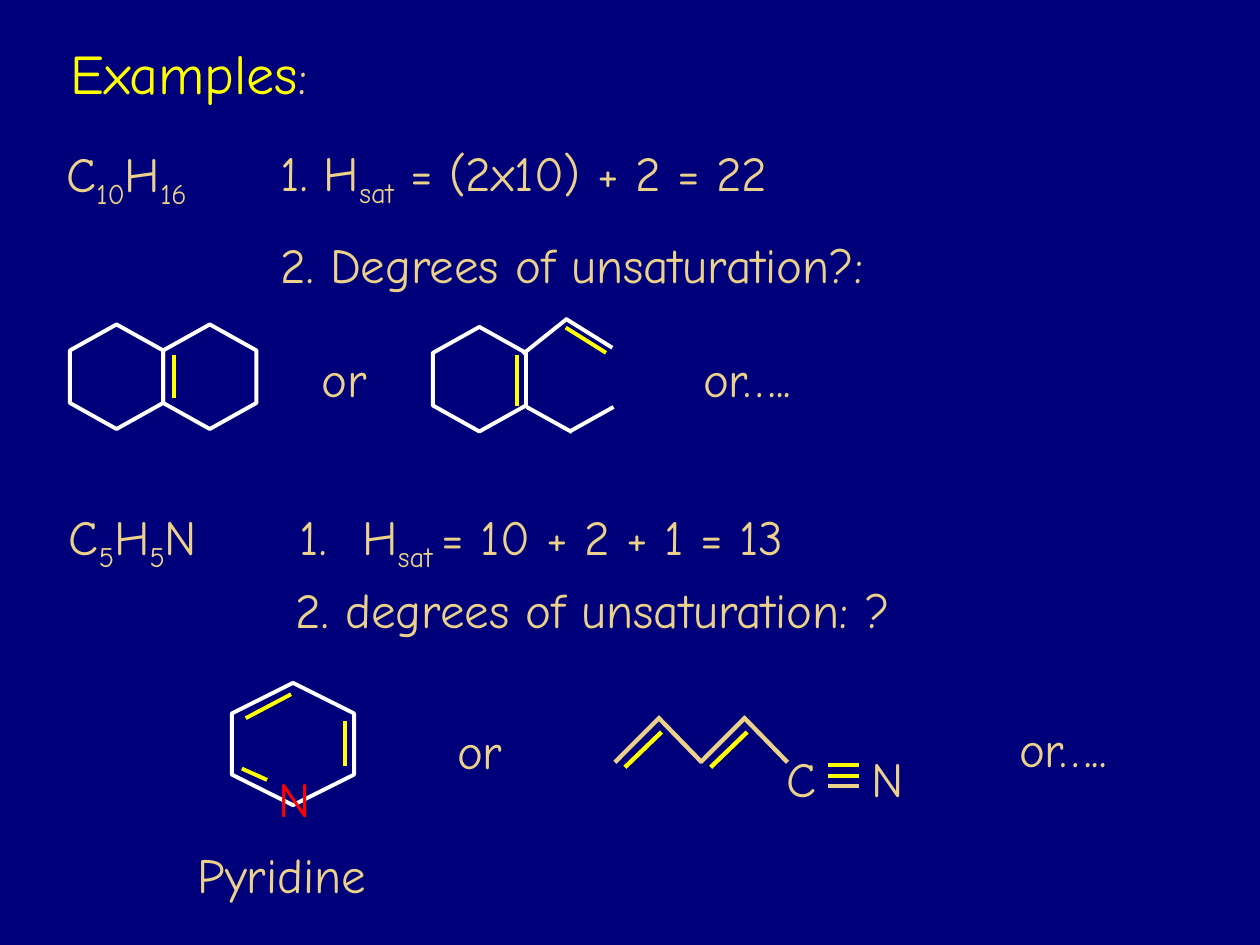
from dataclasses import dataclass

from lxml import etree
from pptx import Presentation
from pptx import util as u
from pptx.dml.color import RGBColor
from pptx.enum import shapes, text
from pptx.oxml import ns


@dataclass(frozen=True)
class Theme:
    """Colours, font and sizes shared by the whole slide."""
    background: str = "00007A"
    sand: str = "EBD189"
    yellow: str = "FFFF00"
    white: str = "FFFFFF"
    red: str = "FF0000"
    font: str = "Comic Neue"
    title: int = 32
    body: int = 28
    ring: float = 2.25
    chain: float = 2.5


THEME = Theme()
CENTER = text.PP_ALIGN.CENTER
LEFT = text.PP_ALIGN.LEFT


def add_run(paragraph, words, colour=THEME.sand, size=THEME.body, subscript=False):
    """Append one formatted run to a paragraph."""
    run = paragraph.add_run()
    run.text = words
    run.font.name = THEME.font
    run.font.size = u.Pt(size)
    run.font.color.rgb = RGBColor.from_string(colour)
    if subscript:
        run.font._element.set("baseline", "-25000")


def add_label(slide, left, top, width, words="", align=LEFT, colour=THEME.sand, height=0.57):
    """Add a text box; every second part split by a bar is a subscript."""
    box = slide.shapes.add_textbox(*map(u.Inches, (left, top, width, height)))
    frame = box.text_frame
    frame.word_wrap = True
    frame.auto_size = text.MSO_AUTO_SIZE.SHAPE_TO_FIT_TEXT
    paragraph = frame.paragraphs[0]
    paragraph.alignment = align
    for index, part in enumerate(words.split("|") if words else []):
        add_run(paragraph, part, colour, subscript=index % 2 == 1)
    return paragraph


def hang(paragraph, numbered=False):
    """Give a paragraph a half-inch hanging indent and an optional number."""
    properties = paragraph._p.get_or_add_pPr()
    properties.set("marL", str(u.Inches(0.5)))
    properties.set("indent", str(-u.Inches(0.5)))
    if numbered:
        etree.SubElement(properties, ns.qn("a:buAutoNum"), type="arabicPeriod")


def add_ring(slide, left, top, width, height, adjustment):
    """Add an unfilled hexagon standing on its point."""
    ring = slide.shapes.add_shape(
        shapes.MSO_SHAPE.HEXAGON, *map(u.Inches, (left, top, width, height)))
    ring.rotation = 90
    ring.adjustments[0] = adjustment
    ring.shadow.inherit = False
    ring.fill.background()
    ring.line.color.rgb = RGBColor.from_string(THEME.white)
    ring.line.width = u.Pt(THEME.ring)


def add_bonds(slide, left, top, colour, weight, bonds):
    """Draw bonds given as start and end offsets from a corner."""
    for x1, y1, x2, y2 in bonds:
        line = slide.shapes.add_connector(
            shapes.MSO_CONNECTOR.STRAIGHT,
            *map(u.Inches, (left + x1, top + y1, left + x2, top + y2)))
        line.line.color.rgb = RGBColor.from_string(colour)
        line.line.width = u.Pt(weight)
        etree.SubElement(line._element.spPr, ns.qn("a:effectLst"))


def add_title(slide, left, top, width):
    """Add the heading with its smaller colon."""
    paragraph = add_label(slide, left, top, width, align=CENTER, height=0.63)
    add_run(paragraph, "Examples", THEME.yellow, THEME.title)
    add_run(paragraph, ":")


def add_fused_rings(slide, left, top):
    """Draw two fused six-membered rings sharing a double bond."""
    for offset in (0, 0.74):
        add_ring(slide, left + offset, top, 0.83, 0.74, 0.279)
    add_bonds(slide, left, top, THEME.yellow, THEME.ring, [(0.87, 0.2, 0.87, 0.54)])


def add_open_ring(slide, left, top):
    """Draw one ring carrying a vinyl and an ethyl group."""
    add_ring(slide, left, top, 0.83, 0.74, 0.279)
    add_bonds(slide, left, top, THEME.white, THEME.ring, [
        (1.11, -0.11, 0.76, 0.17), (1.1, -0.11, 1.47, 0.12),
        (1.14, 0.78, 1.48, 0.59), (1.15, 0.79, 0.79, 0.59)])
    add_bonds(slide, left, top, THEME.yellow, THEME.ring, [
        (0.71, 0.18, 0.71, 0.58), (1.1, -0.04, 1.42, 0.16)])


def add_pyridine(slide, left, top):
    """Draw the pyridine ring with its nitrogen and name."""
    add_ring(slide, left, top, 0.97, 0.97, 0.25)
    add_label(slide, left + 0.26, top + 0.63, 0.47, "N", CENTER, THEME.red, 0.59)
    add_bonds(slide, left, top, THEME.yellow, THEME.ring, [
        (0.08, 0.68, 0.28, 0.77), (0.9, 0.3, 0.9, 0.66), (0.11, 0.28, 0.47, 0.09)])
    add_label(slide, left - 0.37, top + 1.23, 1.68, "Pyridine")


def add_nitrile(slide, left, top):
    """Draw the zigzag chain that ends in a triple bond to nitrogen."""
    for offset in (0, 0.68):
        add_bonds(slide, left + offset, top, THEME.sand, THEME.chain, [
            (0.36, 0, 0, 0.36), (0.34, 0, 0.69, 0.36)])
        add_bonds(slide, left + offset, top, THEME.yellow, THEME.chain, [
            (0.37, 0.12, 0.08, 0.4)])
    for offset, atom in ((1.23, "C"), (1.91, "N")):
        add_label(slide, left + offset, top + 0.2, 0.51, atom, CENTER)
    for y, colour in ((0.38, THEME.yellow), (0.47, THEME.yellow), (0.55, THEME.sand)):
        add_bonds(slide, left, top, colour, THEME.chain, [(1.69, y, 1.94, y)])


def add_hydrocarbon(slide, left, top):
    """Lay out the first example, its working and its structures."""
    add_label(slide, left, top, 1.37, "C|10|H|16", CENTER)
    add_label(slide, left + 1.81, top - 0.01, 5.42, "1. H|sat| = (2x10) + 2 = 22")
    add_label(slide, left + 1.81, top + 0.72, 7.59, "2. Degrees of unsaturation?:")
    add_fused_rings(slide, left + 0.19, top + 1.53)
    add_label(slide, left + 2.1, top + 1.63, 0.63, "or", CENTER)
    add_open_ring(slide, left + 3.07, top + 1.55)
    add_label(slide, left + 4.84, top + 1.63, 1.54, "or…..", CENTER)


def add_nitrogen_compound(slide, left, top):
    """Lay out the second example, its working and its structures."""
    add_label(slide, left, top, 1.37, "C|5|H|5|N", CENTER)
    hang(add_label(slide, left + 1.91, top, 5.14, "H|sat |= 10 + 2 + 1 = 13"), numbered=True)
    hang(add_label(slide, left + 1.88, top + 0.58, 8.02, "2. degrees of unsaturation: ?"))
    add_pyridine(slide, left + 1.47, top + 1.45)
    add_label(slide, left + 3.16, top + 1.7, 0.7, "or")
    add_nitrile(slide, left + 4.51, top + 1.72)
    add_label(slide, left + 7.62, top + 1.68, 1.46, "or…..")


def main():
    """Build and save the slide."""
    presentation = Presentation()
    presentation.slide_width = u.Inches(10)
    presentation.slide_height = u.Inches(7.5)
    slide = presentation.slides.add_slide(presentation.slide_layouts[6])
    slide.background.fill.solid()
    slide.background.fill.fore_color.rgb = RGBColor.from_string(THEME.background)
    add_title(slide, 0.27, 0.26, 2.46)
    add_hydrocarbon(slide, 0.32, 1.09)
    add_nitrogen_compound(slide, 0.37, 3.97)
    presentation.save("out.pptx")


if __name__ == "__main__":
    main()
